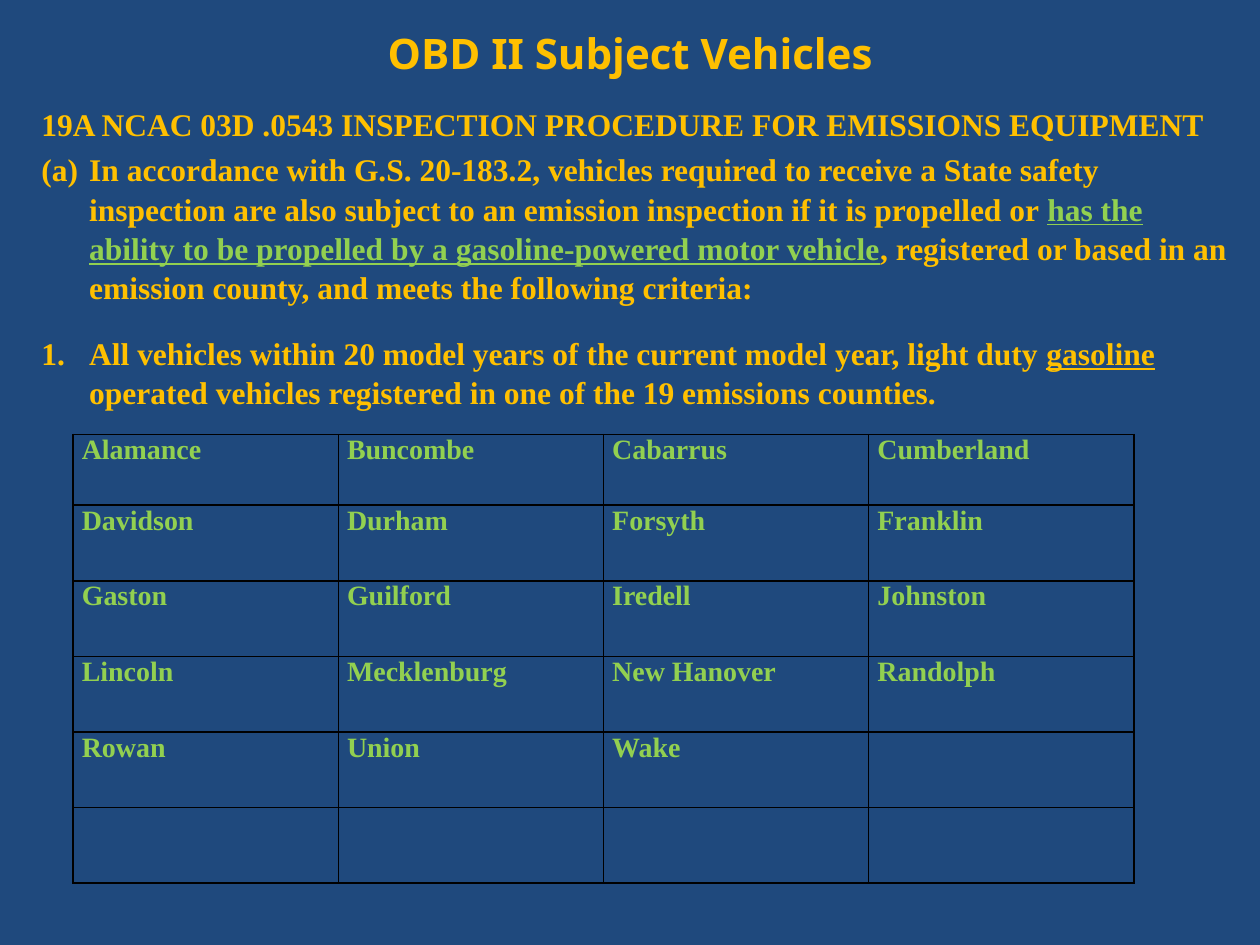
from dataclasses import dataclass
from typing import Optional

from lxml.etree import SubElement
from pptx import Presentation
from pptx.dml.color import RGBColor
from pptx.enum.text import MSO_ANCHOR, PP_ALIGN
from pptx.oxml import parse_xml
from pptx.oxml.ns import nsdecls, qn
from pptx.util import Inches, Pt


@dataclass(frozen=True)
class Theme:
    background: RGBColor = RGBColor(0x1F, 0x49, 0x7D)
    gold: RGBColor = RGBColor(0xFF, 0xC0, 0x00)
    green: RGBColor = RGBColor(0x92, 0xD0, 0x50)
    border: str = "000000"
    title_font: str = "Noto Sans"
    body_font: str = "Times New Roman"
    title_size: Pt = Pt(24)
    body_size: Pt = Pt(18)
    table_size: Pt = Pt(16)
    body_spacing: float = 1.04


@dataclass(frozen=True)
class Span:
    text: str
    color: RGBColor
    underline: bool = False


@dataclass(frozen=True)
class Clause:
    spans: tuple[Span, ...]
    numbering: Optional[str] = None
    space_before: float = 0


THEME = Theme()

CLAUSES = (
    Clause((Span("19A NCAC 03D .0543 INSPECTION PROCEDURE FOR EMISSIONS EQUIPMENT", THEME.gold),)),
    Clause(
        (
            Span("In accordance with G.S. 20-183.2, vehicles required to receive a State safety "
                 "inspection are also subject to an emission inspection if it is propelled or ", THEME.gold),
            Span("has the ability to be propelled by a gasoline-powered motor vehicle", THEME.green, True),
            Span(", registered or based in an emission county, and meets the following criteria:", THEME.gold),
        ),
        "alphaLcParenBoth",
        3.6,
    ),
    Clause(
        (
            Span("All vehicles within 20 model years of the current model year, light duty ", THEME.gold),
            Span("gasoline", THEME.gold, True),
            Span(" operated vehicles registered in one of the 19 emissions counties.", THEME.gold),
        ),
        "arabicPeriod",
        15,
    ),
)

COUNTIES = (
    ("Alamance", "Buncombe", "Cabarrus", "Cumberland"),
    ("Davidson", "Durham", "Forsyth", "Franklin"),
    ("Gaston", "Guilford", "Iredell", "Johnston"),
    ("Lincoln", "Mecklenburg", "New Hanover", "Randolph"),
    ("Rowan", "Union", "Wake", ""),
    ("", "", "", ""),
)


def style_font(font, name: str, size: Pt, color: RGBColor) -> None:
    font.name = name
    font.size = size
    font.bold = True
    font.color.rgb = color


def add_title(slide, text: str) -> None:
    frame = slide.shapes.add_textbox(Inches(0.5), Inches(0.08), Inches(9), Inches(0.67)).text_frame
    frame.word_wrap = True
    frame.vertical_anchor = MSO_ANCHOR.MIDDLE
    frame.text = text
    paragraph = frame.paragraphs[0]
    paragraph.alignment = PP_ALIGN.CENTER
    style_font(paragraph.runs[0].font, THEME.title_font, THEME.title_size, THEME.gold)


def fill_clause(paragraph, clause: Clause) -> None:
    paragraph.line_spacing = THEME.body_spacing
    paragraph.space_before = Pt(clause.space_before)
    properties = paragraph._p.get_or_add_pPr()
    properties.set("marL", str(Inches(0.53 if clause.numbering else 0.15)))
    if clause.numbering:
        properties.set("indent", str(Inches(-0.38)))
        bullet_color = SubElement(properties, qn("a:buClr"))
        SubElement(bullet_color, qn("a:srgbClr"), val=str(THEME.gold))
        SubElement(properties, qn("a:buFont"), typeface=THEME.body_font)
        SubElement(properties, qn("a:buAutoNum"), type=clause.numbering)
    for span in clause.spans:
        run = paragraph.add_run()
        run.text = span.text
        style_font(run.font, THEME.body_font, THEME.body_size, span.color)
        run.font.underline = span.underline


def add_regulation(slide, clauses: tuple[Clause, ...]) -> None:
    frame = slide.shapes.add_textbox(Inches(0.08), Inches(0.77), Inches(9.83), Inches(6.73)).text_frame
    frame.word_wrap = True
    for index, clause in enumerate(clauses):
        fill_clause(frame.add_paragraph() if index else frame.paragraphs[0], clause)


def style_cell(cell, text: str) -> None:
    cell.margin_left = cell.margin_right = Inches(0.07)
    cell.margin_top = cell.margin_bottom = 0
    cell.fill.background()
    properties = cell._tc.get_or_add_tcPr()
    for index, side in enumerate(("lnL", "lnR", "lnT", "lnB")):
        properties.insert(index, parse_xml(
            f'<a:{side} {nsdecls("a")} w="{Pt(1)}"><a:solidFill>'
            f'<a:srgbClr val="{THEME.border}"/></a:solidFill></a:{side}>'
        ))
    cell.text_frame.text = text
    for run in cell.text_frame.paragraphs[0].runs:
        style_font(run.font, THEME.body_font, THEME.table_size, THEME.green)


def add_county_table(slide, counties: tuple[tuple[str, ...], ...]) -> None:
    table = slide.shapes.add_table(
        len(counties), len(counties[0]), Inches(0.58), Inches(3.45), Inches(8.42), Inches(3.56)
    ).table
    table.first_row = False
    table.horz_banding = False
    for row_index, names in enumerate(counties):
        table.rows[row_index].height = Inches(0.6 if row_index else 0.56)
        for column_index, name in enumerate(names):
            style_cell(table.cell(row_index, column_index), name)


def main() -> None:
    """Build the slide on vehicles subject to emission inspection."""
    presentation = Presentation()
    presentation.slide_width = Inches(10)
    presentation.slide_height = Inches(7.5)
    slide = presentation.slides.add_slide(presentation.slide_layouts[6])
    slide.background.fill.solid()
    slide.background.fill.fore_color.rgb = THEME.background
    add_title(slide, "OBD II Subject Vehicles")
    add_regulation(slide, CLAUSES)
    add_county_table(slide, COUNTIES)
    presentation.save("out.pptx")


if __name__ == "__main__":
    main()
